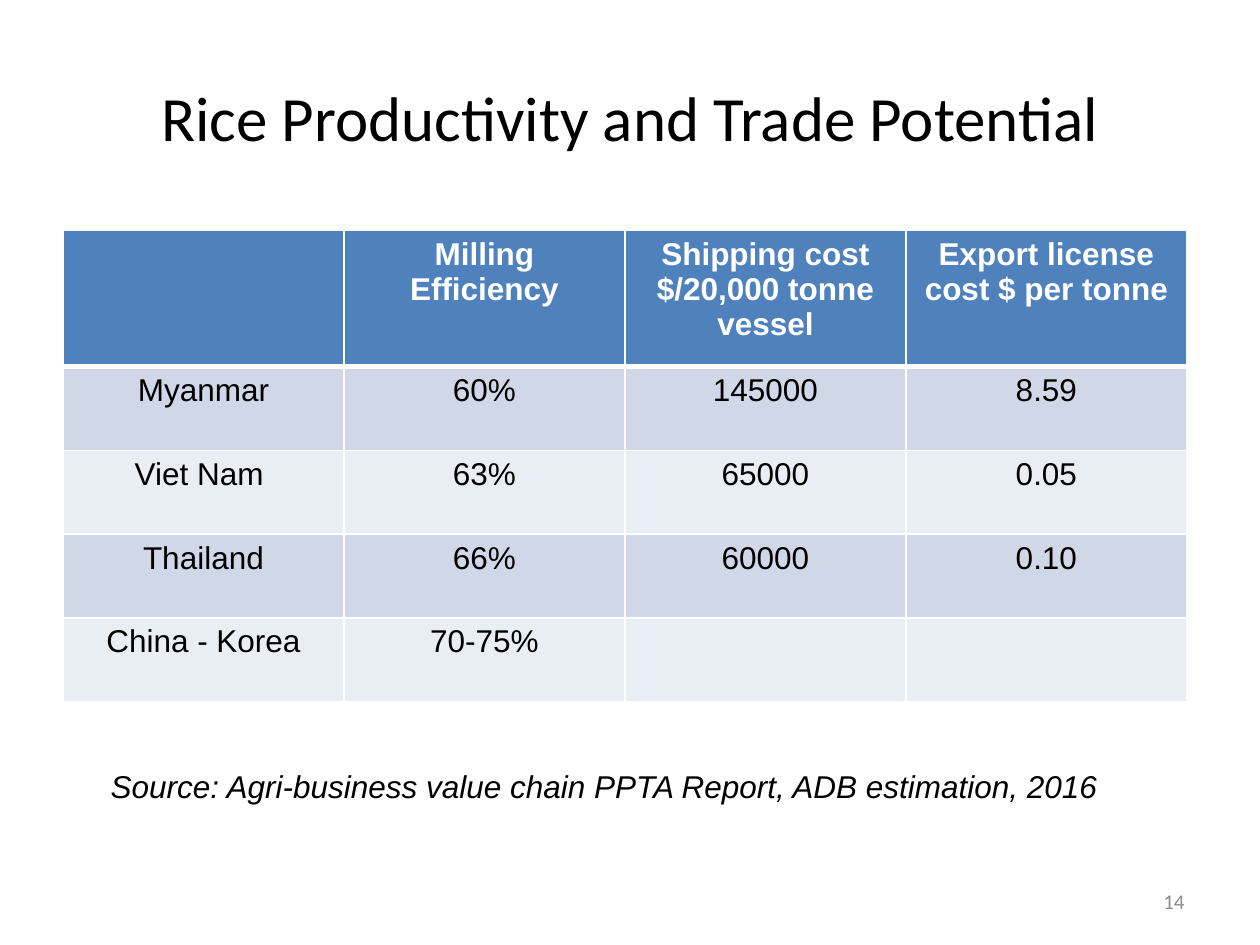
from lxml import etree
from pptx import Presentation
from pptx.dml.color import RGBColor
from pptx.enum.text import MSO_ANCHOR as Anchor, PP_ALIGN as Align
from pptx.oxml.ns import qn
from pptx.util import Inches, Pt

WHITE = RGBColor(0xFF, 0xFF, 0xFF)
BLACK = RGBColor(0, 0, 0)
GRAY = RGBColor(0x8C, 0x8C, 0x8C)
BLUE = RGBColor(0x4F, 0x81, 0xBD)
BANDS = RGBColor(0xD0, 0xD8, 0xE8), RGBColor(0xE9, 0xED, 0xF4)

ROWS = [
    ("", "Milling Efficiency", "Shipping cost $/20,000 tonne vessel",
     "Export license cost $ per tonne"),
    ("Myanmar", "60%", "145000", "8.59"),
    ("Viet Nam ", "63%", "65000", "0.05"),
    ("Thailand", "66%", "60000", "0.10"),
    ("China - Korea", "70-75%", "", ""),
]


def write(frame, text, size=18, face="Arial", color=BLACK, align=Align.LEFT,
          bold=False, italic=False):
    para = frame.paragraphs[0]
    para.text = text
    para.alignment = align
    font = para.font
    font.size = Pt(size)
    font.name = face
    font.bold = bold
    font.italic = italic
    font.color.rgb = color


def add_text(slide, box, text, anchor=Anchor.MIDDLE, **style):
    frame = slide.shapes.add_textbox(*map(Inches, box)).text_frame
    frame.word_wrap = True
    frame.vertical_anchor = anchor
    write(frame, text, **style)


def add_edges(cell, top, base):
    props = cell._tc.get_or_add_tcPr()
    edges = [("L", 1), ("R", 1), ("T", top), ("B", base)]
    for spot, (side, width) in enumerate(edges):
        line = etree.Element(qn(f"a:ln{side}"), w=str(Pt(width)))
        fill = etree.SubElement(line, qn("a:solidFill"))
        etree.SubElement(fill, qn("a:srgbClr"), val=str(WHITE))
        props.insert(spot, line)


def add_rice(slide, box, head=1.08):
    width, height = box[2:]
    count = len(ROWS)
    grid = slide.shapes.add_table(count, len(ROWS[0]), *map(Inches, box)).table
    for col in grid.columns:
        col.width = Inches(width / len(ROWS[0]))
    for r, row in enumerate(ROWS):
        first = r == 0
        tall = head if first else (height - head) / (count - 1)
        grid.rows[r].height = Inches(tall)
        for c, text in enumerate(row):
            cell = grid.cell(r, c)
            cell.fill.solid()
            cell.fill.fore_color.rgb = BLUE if first else BANDS[(r - 1) % 2]
            add_edges(cell, 3 if r == 1 else 1, 3 if first else 1)
            write(cell.text_frame, text, align=Align.CENTER, bold=first,
                  color=WHITE if first else BLACK)


def main():
    deck = Presentation()
    deck.slide_width, deck.slide_height = Inches(10), Inches(7.5)
    slide = deck.slides.add_slide(deck.slide_layouts[6])
    add_text(slide, (0.5, 0.3, 9, 1.25), "Rice Productivity and Trade Potential",
             size=36, face="Calibri", align=Align.CENTER)
    add_rice(slide, (0.5, 1.83, 8.92, 3.74))
    add_text(slide, (0.78, 6.04, 8.58, 0.4),
             "Source: Agri-business value chain PPTA Report, ADB estimation, 2016",
             anchor=Anchor.TOP, italic=True)
    add_text(slide, (7.17, 6.95, 2.33, 0.4), "14", size=12, face="Calibri",
             color=GRAY, align=Align.RIGHT)
    deck.save("out.pptx")


if __name__ == "__main__":
    main()
